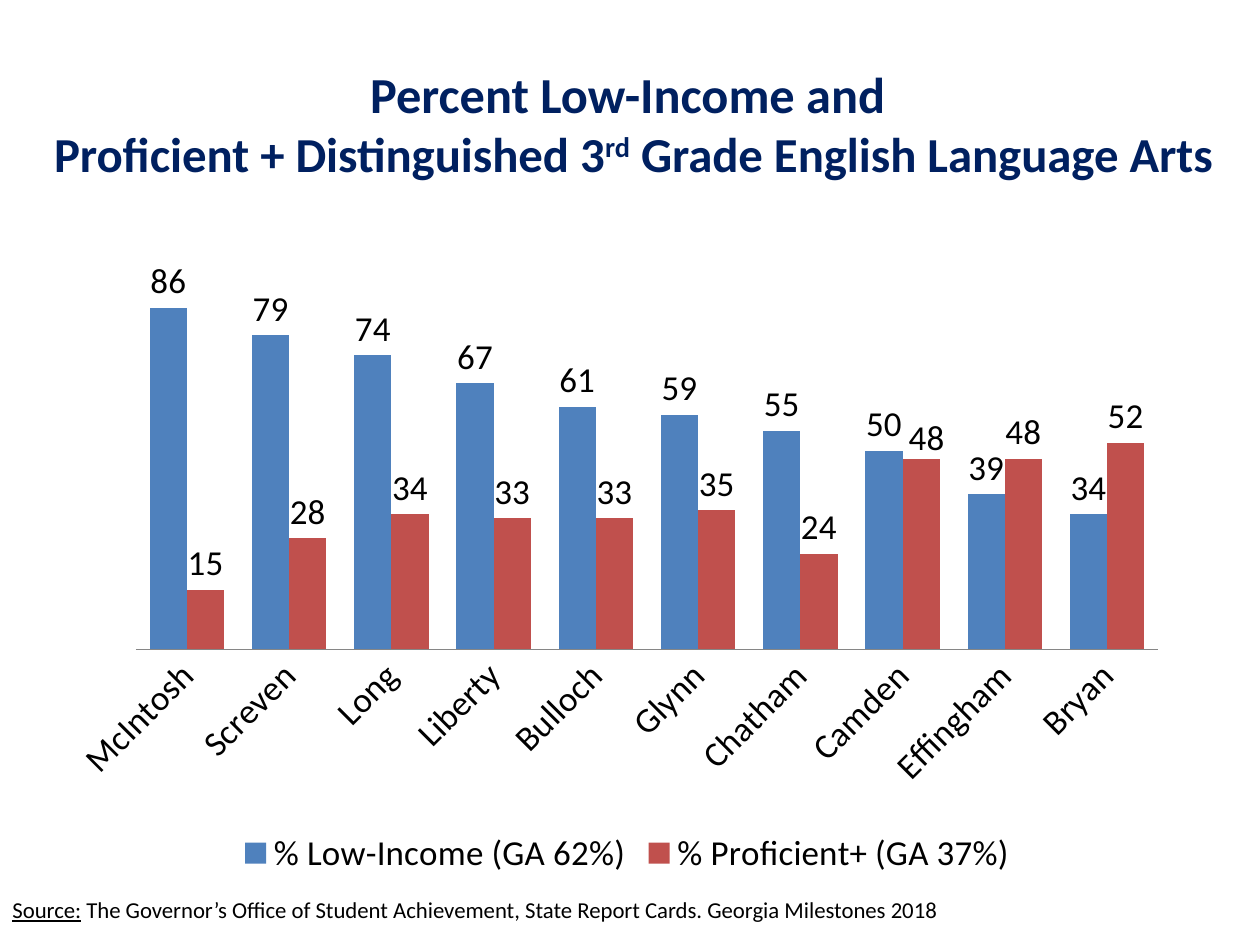
import pptx
import pptx.chart.data
import pptx.dml.color
import pptx.enum.chart
import pptx.enum.text
import pptx.oxml
import pptx.oxml.ns
import pptx.util

Pt = pptx.util.Pt
RGBColor = pptx.dml.color.RGBColor

FONT = "Calibri"
NAVY = RGBColor(0x00, 0x20, 0x60)
BLACK = RGBColor(0x00, 0x00, 0x00)
BLUE = RGBColor(0x4F, 0x81, 0xBD)
RED = RGBColor(0xC0, 0x50, 0x4D)
GRAY = RGBColor(0x86, 0x86, 0x86)

COUNTIES = ["McIntosh", "Screven", "Long", "Liberty", "Bulloch",
            "Glynn", "Chatham", "Camden", "Effingham", "Bryan"]
SERIES = [
    ("% Low-Income (GA 62%)", [86, 79, 74, 67, 61, 59, 55, 50, 39, 34], BLUE),
    ("% Proficient+ (GA 37%)", [15, 28, 34, 33, 33, 35, 24, 48, 48, 52], RED),
]


def format_font(font, size, color):
    font.name = FONT
    font.size = Pt(size)
    font.color.rgb = color


def add_span(para, text, size, color):
    span = para.add_run()
    span.text = text
    format_font(span.font, size, color)
    return span


def manual_layout(x, y, w=None, h=None):
    """Return a c:layout element; without a size, x and y are offsets."""
    fields = []
    if w is not None:
        fields += [("layoutTarget", "inner"), ("xMode", "edge"), ("yMode", "edge")]
    fields += [("x", x), ("y", y)]
    if w is not None:
        fields += [("w", w), ("h", h)]
    inner = "".join(f'<c:{name} val="{value}"/>' for name, value in fields)
    return pptx.oxml.parse_xml(
        f'<c:layout {pptx.oxml.ns.nsdecls("c")}>'
        f"<c:manualLayout>{inner}</c:manualLayout></c:layout>")


def place_title(title, left, top, width, height):
    title.left, title.top = Pt(left), Pt(top)
    title.width, title.height = Pt(width), Pt(height)
    frame = title.text_frame
    frame.word_wrap = True
    frame.vertical_anchor = pptx.enum.text.MSO_ANCHOR.MIDDLE
    para = frame.paragraphs[0]
    para.alignment = pptx.enum.text.PP_ALIGN.CENTER
    spans = [add_span(para, "Percent Low-Income and ", 28.8, NAVY)]
    para.add_line_break()
    for text in ("Proficient + Distinguished 3", "rd", " Grade English Language Arts"):
        spans.append(add_span(para, text, 27.9, NAVY))
    for span in spans:
        span.font.bold = True
    # Superscript ordinal
    spans[2].font._element.set("baseline", "30000")


def add_chart(page, left, top, width, height):
    data = pptx.chart.data.CategoryChartData(number_format="0")
    data.categories = COUNTIES
    for name, values, _ in SERIES:
        data.add_series(name, values)
    chart = page.shapes.add_chart(
        pptx.enum.chart.XL_CHART_TYPE.COLUMN_CLUSTERED,
        Pt(left), Pt(top), Pt(width), Pt(height), data).chart
    format_font(chart.font, 20, BLACK)
    chart.has_title = False

    # Legend
    chart.has_legend = True
    chart.legend.position = pptx.enum.chart.XL_LEGEND_POSITION.BOTTOM
    chart.legend.include_in_layout = False

    # Axes
    no_tick = pptx.enum.chart.XL_TICK_MARK.NONE
    chart.category_axis.major_tick_mark = no_tick
    chart.category_axis.format.line.color.rgb = GRAY
    value_axis = chart.value_axis
    value_axis.minimum_scale, value_axis.maximum_scale = 0, 100
    value_axis.has_major_gridlines = False
    value_axis.visible = False

    # Columns and their labels
    plot = chart.plots[0]
    plot.gap_width = 75
    plot.overlap = 0
    plot.vary_by_categories = False
    outside = pptx.enum.chart.XL_LABEL_POSITION.OUTSIDE_END
    for series, (_, _, color) in zip(plot.series, SERIES):
        series.format.fill.solid()
        series.format.fill.fore_color.rgb = color
        labels = series.data_labels
        labels.show_value = True
        labels.number_format = "0"
        labels.number_format_is_linked = False
        labels.position = outside

    # Nudge the Camden label clear of its neighbour
    camden = COUNTIES.index("Camden")
    plot.series[1].points[camden].data_label.position = outside
    label = plot.series[1]._element.find(".//" + pptx.oxml.ns.qn("c:dLbl"))
    label.insert(1, manual_layout(0.005, 0.01))

    # Fixed plot area
    area = chart._chartSpace.chart.plotArea
    for old in area.findall(pptx.oxml.ns.qn("c:layout")):
        area.remove(old)
    area.insert(0, manual_layout(0.054, 0, 0.928, 0.631))


def add_source(page, left, top, width, height):
    box = page.shapes.add_textbox(Pt(left), Pt(top), Pt(width), Pt(height))
    box.text_frame.word_wrap = True
    para = box.text_frame.paragraphs[0]
    para.line_spacing = 0.6
    para.space_before = Pt(6.5)
    add_span(para, "Source:", 13, BLACK).font.underline = True
    add_span(para, " The Governor’s Office of Student Achievement, State Report Cards."
                   " Georgia Milestones 2018", 13, BLACK)


def main():
    deck = pptx.Presentation()
    deck.slide_width, deck.slide_height = Pt(720), Pt(540)
    page = deck.slides.add_slide(deck.slide_layouts[5])
    place_title(page.shapes.title, 18, 18, 688, 104.4)
    add_source(page, 0, 514, 630, 18)
    add_chart(page, 43.2, 144, 630, 360)
    deck.save("out.pptx")


if __name__ == "__main__":
    main()
